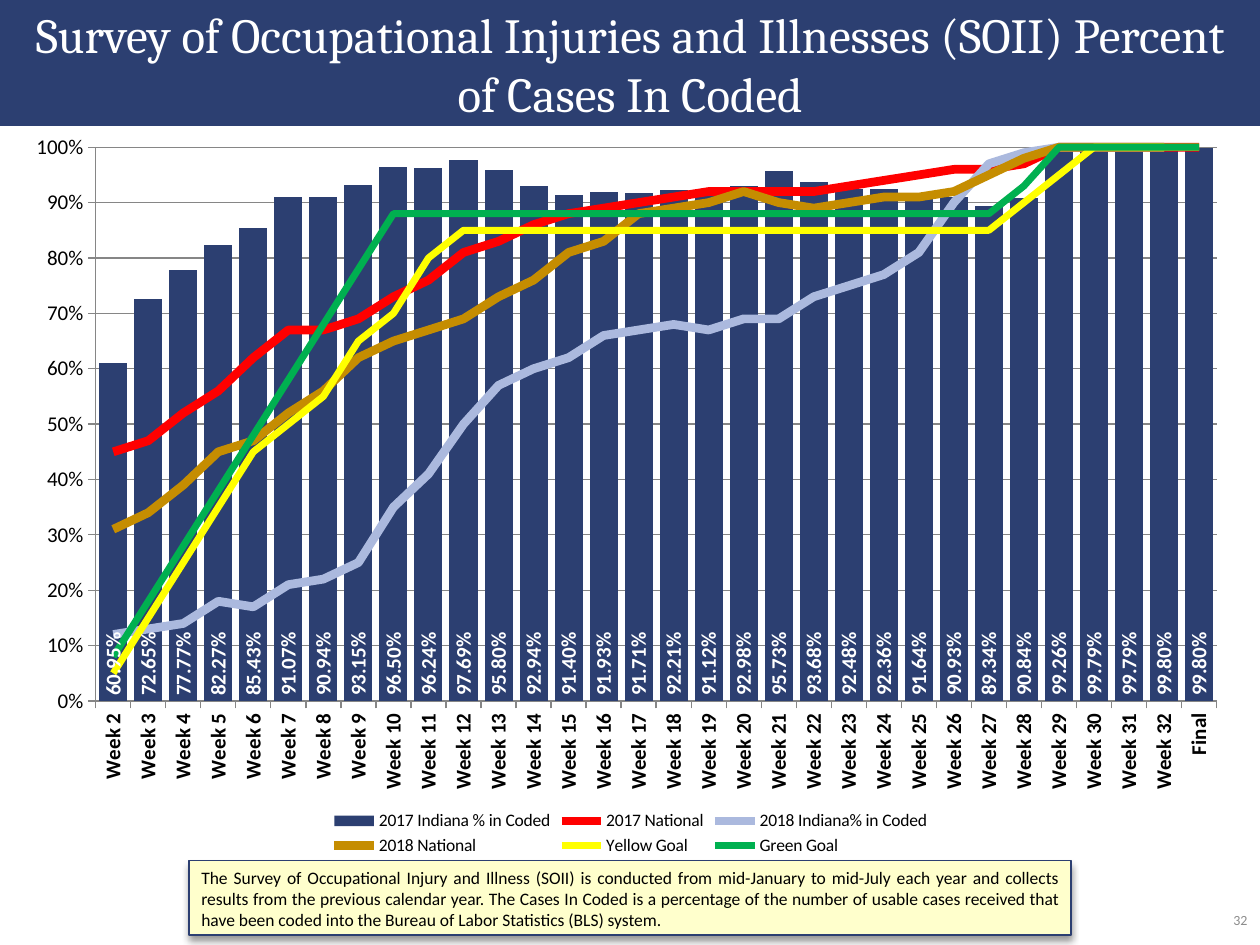
from dataclasses import dataclass

from lxml.etree import SubElement
from pptx import Presentation
from pptx.chart.data import CategoryChartData
from pptx.dml.color import RGBColor
from pptx.enum.chart import (XL_CHART_TYPE, XL_LABEL_POSITION, XL_LEGEND_POSITION,
                             XL_MARKER_STYLE, XL_TICK_MARK)
from pptx.enum.shapes import MSO_SHAPE
from pptx.enum.text import MSO_ANCHOR, PP_ALIGN
from pptx.oxml import parse_xml
from pptx.oxml.ns import nsdecls, qn
from pptx.util import Inches, Pt

NAVY = "2C3F71"
BLACK = "000000"
WHITE = "FFFFFF"
GRID = "868686"


@dataclass
class Series:
    name: str
    color: str
    percents: list
    width: float = 0


WEEKS = [f"Week {number}" for number in range(2, 33)] + ["Final"]
SERIES = [
    Series("2017 Indiana % in Coded", NAVY, [
        60.95, 72.65, 77.77, 82.27, 85.43, 91.07, 90.94, 93.15, 96.50, 96.24, 97.69,
        95.80, 92.94, 91.40, 91.93, 91.71, 92.21, 91.12, 92.98, 95.73, 93.68, 92.48,
        92.36, 91.64, 90.93, 89.34, 90.84, 99.26, 99.79, 99.79, 99.80, 99.80]),
    Series("2017 National", "FF0000", [
        45, 47, 52, 56, 62, 67, 67, 69, 73, 76, 81, 83, 86, 88, 89, 90,
        91, 92, 92, 92, 92, 93, 94, 95, 96, 96, 97] + [100] * 5, 5),
    Series("2018 Indiana% in Coded", "ABB9DE", [
        12, 13, 14, 18, 17, 21, 22, 25, 35, 41, 50, 57, 60, 62, 66, 67,
        68, 67, 69, 69, 73, 75, 77, 81, 90, 97, 99] + [100] * 4 + [None], 5),
    Series("2018 National", "C58D01", [
        31, 34, 39, 45, 47, 52, 56, 62, 65, 67, 69, 73, 76, 81, 83, 88,
        89, 90, 92, 90, 89, 90, 91, 91, 92, 95, 98] + [100] * 4 + [None], 5),
    Series("Yellow Goal", "FFFF00", [
        5, 15, 25, 35, 45, 50, 55, 65, 70, 80] + [85] * 16 + [90, 95] + [100] * 4, 4),
    Series("Green Goal", "00B050",
           list(range(8, 88, 10)) + [88] * 18 + [93] + [100] * 5, 4),
]


def rgb(color: str) -> RGBColor:
    return RGBColor.from_string(color)


def set_font(font, size: float, color: str, name: str = "Calibri", bold: bool = False) -> None:
    font.size, font.name, font.bold = Pt(size), name, bold
    font.color.rgb = rgb(color)


def place(box, left: float, top: float, width: float, height: float) -> None:
    box.left, box.top = Inches(left), Inches(top)
    box.width, box.height = Inches(width), Inches(height)


def write(box, text: str, size: float, color: str, align, anchor, name: str = "Calibri") -> None:
    frame = box.text_frame
    frame.word_wrap = True
    frame.vertical_anchor = anchor
    para = frame.paragraphs[0]
    para.alignment = align
    span = para.add_run()
    span.text = text
    set_font(span.font, size, color, name)


def turn_upright(element) -> None:
    """Rotate axis or data label text to read upwards."""
    body = element.find(qn("c:txPr")).find(qn("a:bodyPr"))
    body.set("rot", "-5400000")
    body.set("vert", "horz")


def move_to_lines(chart) -> None:
    """Turn every series after the first into a line on the same axes."""
    bars = chart.plots[0]._element
    lines = parse_xml(f'<c:lineChart {nsdecls("c")}><c:grouping val="standard"/>'
                      '<c:varyColors val="0"/></c:lineChart>')
    for series in bars.findall(qn("c:ser"))[1:]:
        for bar_only in series.findall(qn("c:invertIfNegative")):
            series.remove(bar_only)
        lines.append(series)
    SubElement(lines, qn("c:marker")).set("val", "1")
    for axis in bars.findall(qn("c:axId")):
        SubElement(lines, qn("c:axId")).set("val", axis.get("val"))
    bars.addnext(lines)


def fix_plot_area(chart, left: float, top: float, width: float, height: float) -> None:
    area = chart.plots[0]._element.getparent()
    for old in area.findall(qn("c:layout")):
        area.remove(old)
    area.insert(0, parse_xml(
        f'<c:layout {nsdecls("c")}><c:manualLayout><c:layoutTarget val="inner"/>'
        '<c:xMode val="edge"/><c:yMode val="edge"/>'
        f'<c:x val="{left}"/><c:y val="{top}"/><c:w val="{width}"/><c:h val="{height}"/>'
        '</c:manualLayout></c:layout>'))


def add_coding_chart(page) -> None:
    data = CategoryChartData(number_format="0.00%")
    data.categories = WEEKS
    for item in SERIES:
        data.add_series(item.name, [None if value is None else round(value / 100, 4)
                                    for value in item.percents])
    chart = page.shapes.add_chart(XL_CHART_TYPE.COLUMN_CLUSTERED, Inches(0.17), Inches(1),
                                  Inches(9.67), Inches(5.83), data).chart
    set_font(chart.font, 18, BLACK)
    chart.has_title = False
    move_to_lines(chart)
    fix_plot_area(chart, 0.061, 0.029, 0.92, 0.754)

    # Columns with upright labels at the base
    columns, lines = chart.plots
    columns.gap_width = 25
    columns.vary_by_categories = False
    bar = columns.series[0]
    bar.format.fill.solid()
    bar.format.fill.fore_color.rgb = rgb(SERIES[0].color)
    labels = bar.data_labels
    labels.show_value = True
    labels.number_format, labels.number_format_is_linked = "0.00%", False
    labels.position = XL_LABEL_POSITION.INSIDE_BASE
    set_font(labels.font, 12, WHITE, bold=True)
    turn_upright(labels._element)

    # Lines
    for line, item in zip(lines.series, SERIES[1:]):
        line.smooth = False
        line.format.line.color.rgb = rgb(item.color)
        line.format.line.width = Pt(item.width)
        line.marker.style = XL_MARKER_STYLE.NONE

    # Axes and legend
    weeks, percent = chart.category_axis, chart.value_axis
    for axis in (weeks, percent):
        axis.major_tick_mark = XL_TICK_MARK.OUTSIDE
        axis.minor_tick_mark = XL_TICK_MARK.NONE
        axis.format.line.color.rgb = rgb(GRID)
        set_font(axis.tick_labels.font, 12, BLACK, bold=axis is weeks)
    turn_upright(weeks._element)
    percent.minimum_scale, percent.maximum_scale, percent.major_unit = 0, 1, 0.1
    percent.tick_labels.number_format = "0%"
    percent.tick_labels.number_format_is_linked = False
    percent.major_gridlines.format.line.color.rgb = rgb(GRID)
    chart.has_legend = True
    chart.legend.position = XL_LEGEND_POSITION.BOTTOM
    chart.legend.include_in_layout = False
    set_font(chart.legend.font, 10, BLACK)


def add_note(page) -> None:
    note = page.shapes.add_shape(MSO_SHAPE.RECTANGLE, Inches(1.5), Inches(6.83),
                                 Inches(7), Inches(0.59))
    note.fill.solid()
    note.fill.fore_color.rgb = rgb("FFFFCC")
    note.line.color.rgb = rgb(NAVY)
    note.line.width = Pt(0.75)
    note.shadow.inherit = False
    note._element.spPr.find(qn("a:effectLst")).append(parse_xml(
        f'<a:outerShdw {nsdecls("a")} blurRad="{Pt(4)}" dist="{Pt(3)}" dir="5400000" '
        f'rotWithShape="0"><a:srgbClr val="{BLACK}"><a:alpha val="40000"/></a:srgbClr>'
        '</a:outerShdw>'))
    write(note, "The Survey of Occupational Injury and Illness (SOII) is conducted from "
          "mid-January to mid-July each year and collects results from the previous calendar "
          "year. The Cases In Coded is a percentage of the number of usable cases received that "
          "have been coded into the Bureau of Labor Statistics (BLS) system.",
          10, BLACK, PP_ALIGN.JUSTIFY, MSO_ANCHOR.TOP)


def main() -> None:
    deck = Presentation()
    deck.slide_width, deck.slide_height = Inches(10), Inches(7.5)
    page = deck.slides.add_slide(deck.slide_layouts[5])

    # Title band
    title = page.shapes.title
    place(title, 0, 0, 10, 1)
    title.fill.solid()
    title.fill.fore_color.rgb = rgb(NAVY)
    write(title, "Survey of Occupational Injuries and Illnesses (SOII) Percent of Cases In Coded",
          28, WHITE, PP_ALIGN.CENTER, MSO_ANCHOR.MIDDLE, "Cambria")

    add_note(page)

    # Page number
    number = page.shapes.add_textbox(Inches(9.67), Inches(7.1), Inches(0.33), Inches(0.4))
    write(number, "32", 8, "8C8C8C", PP_ALIGN.RIGHT, MSO_ANCHOR.MIDDLE)

    add_coding_chart(page)
    deck.save("out.pptx")


if __name__ == "__main__":
    main()
